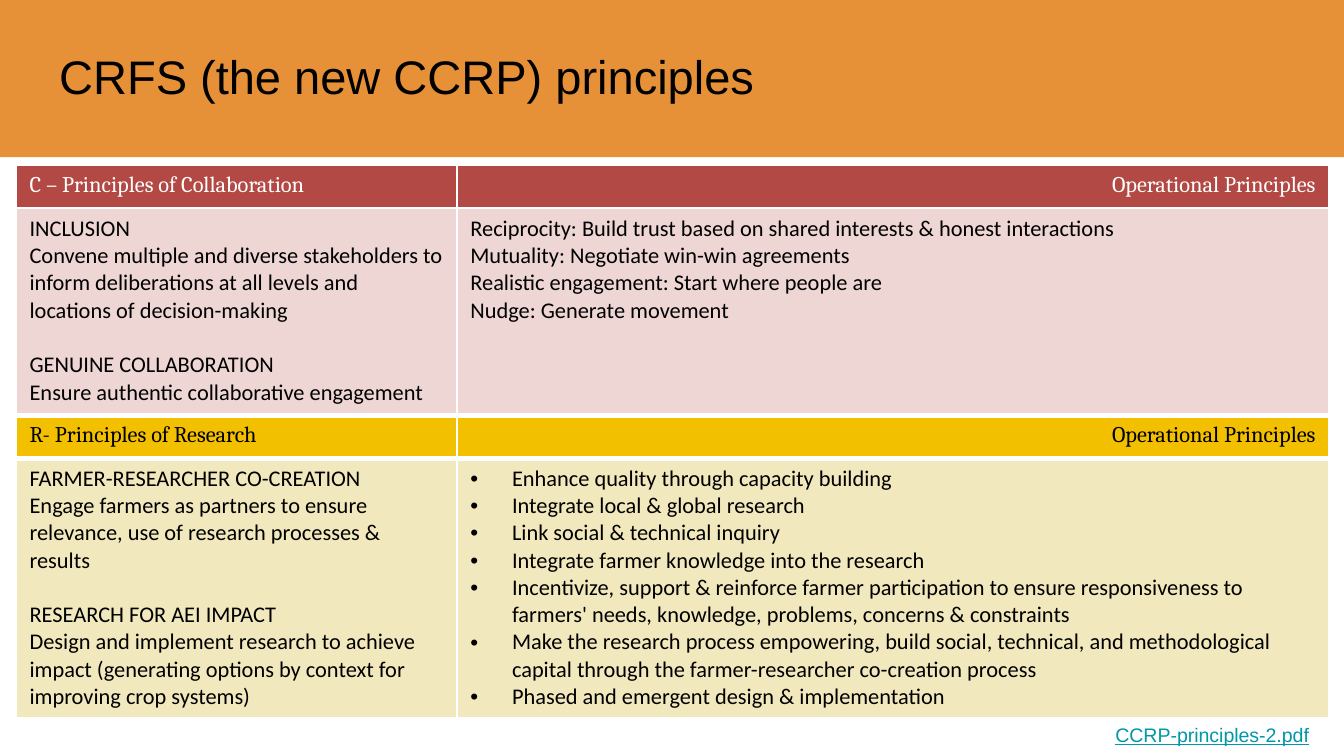
"""Build the slide of collaboration and research principles."""
from copy import deepcopy
from dataclasses import dataclass

from lxml import etree
from pptx import Presentation
from pptx.dml.color import RGBColor
from pptx.enum.shapes import MSO_SHAPE
from pptx.enum.text import MSO_ANCHOR, PP_ALIGN
from pptx.oxml.ns import qn
from pptx.util import Inches, Pt

RECTANGLE = MSO_SHAPE.RECTANGLE
LEFT, RIGHT = PP_ALIGN.LEFT, PP_ALIGN.RIGHT
TOP, MIDDLE = MSO_ANCHOR.TOP, MSO_ANCHOR.MIDDLE
TITLE_ONLY = 5
COLORS = {
    "banner": "E69138", "black": "000000", "white": "FFFFFF", "link": "0097A7",
    "red": "B34944", "pink": "EED6D4", "gold": "F3C000", "cream": "F2E8BD",
}
COLUMN_WIDTHS = (3.28, 6.49)
LINE_GAP = Pt(14.6)


@dataclass(frozen=True)
class TextStyle:
    font: str
    size: float
    color: str = "black"
    underline: bool = False


@dataclass(frozen=True)
class Row:
    height: float
    fill: str
    style: TextStyle
    borders: tuple[int, int]
    principles: list[str]
    operations: list[str]
    operations_align: PP_ALIGN = LEFT
    bulleted: bool = False
    gap_index: int = 0


BODY = TextStyle("Calibri", 12)
OPERATIONAL = ["Operational Principles"]
ROWS = [
    Row(0.32, "red", TextStyle("Cambria", 12, "white"), (1, 1),
        ["C – Principles of Collaboration"], OPERATIONAL, RIGHT),
    Row(1.54, "pink", BODY, (1, 3), [
        "INCLUSION\nConvene multiple and diverse stakeholders to inform deliberations "
        "at all levels and locations of decision-making",
        "GENUINE COLLABORATION\nEnsure authentic collaborative engagement",
    ], [
        "Reciprocity: Build trust based on shared interests & honest interactions",
        "Mutuality: Negotiate win-win agreements",
        "Realistic engagement: Start where people are",
        "Nudge: Generate movement",
    ], gap_index=1),
    Row(0.32, "gold", TextStyle("Cambria", 12), (3, 3),
        ["R- Principles of Research"], OPERATIONAL, RIGHT),
    Row(1.93, "cream", BODY, (3, 1), [
        "FARMER-RESEARCHER CO-CREATION",
        "Engage farmers as partners to ensure relevance, use of research processes & results",
        "RESEARCH FOR AEI IMPACT",
        "Design and implement research to achieve impact (generating options by context "
        "for improving crop systems)",
    ], [
        "Enhance quality through capacity building",
        "Integrate local & global research",
        "Link social & technical inquiry",
        "Integrate farmer knowledge into the research",
        "Incentivize, support & reinforce farmer participation to ensure responsiveness "
        "to farmers' needs, knowledge, problems, concerns & constraints",
        "Make the research process empowering, build social, technical, and methodological "
        "capital through the farmer-researcher co-creation process",
        "Phased and emergent design & implementation",
    ], bulleted=True, gap_index=2),
]


def rgb(name: str) -> RGBColor:
    return RGBColor.from_string(COLORS[name])


def set_attributes(target, values: dict) -> None:
    for name, value in values.items():
        setattr(target, name, value)


def add_bullet(paragraph) -> None:
    properties = paragraph._p.get_or_add_pPr()
    properties.set("marL", str(Inches(0.31)))
    properties.set("indent", str(-Inches(0.31)))
    bullet_color = etree.SubElement(properties, qn("a:buClr"))
    etree.SubElement(bullet_color, qn("a:srgbClr"), val=COLORS["black"])
    etree.SubElement(properties, qn("a:buFont"), typeface="Arial")
    etree.SubElement(properties, qn("a:buChar"), char="•")


def write_text(frame, texts: list[str], style: TextStyle, align: PP_ALIGN = LEFT,
               bulleted: bool = False, gap_index: int = 0) -> None:
    frame.word_wrap = True
    for index, text in enumerate(texts):
        paragraph = frame.paragraphs[0] if index == 0 else frame.add_paragraph()
        if bulleted:
            add_bullet(paragraph)
        set_attributes(paragraph, {
            "alignment": align, "line_spacing": 1.0, "space_after": Pt(0),
            "space_before": LINE_GAP if index and index == gap_index else Pt(0),
        })
        paragraph.text = text
        for run in paragraph.runs:
            set_attributes(run.font, {
                "name": style.font, "size": Pt(style.size), "underline": style.underline,
            })
            run.font.color.rgb = rgb(style.color)
        for line_break in paragraph._p.findall(qn("a:br")):
            line_break.append(deepcopy(paragraph.runs[0]._r.find(qn("a:rPr"))))


def set_margins(target, horizontal: float, vertical: float) -> None:
    set_attributes(target, {
        "margin_left": Inches(horizontal), "margin_right": Inches(horizontal),
        "margin_top": Inches(vertical), "margin_bottom": Inches(vertical),
    })


def add_borders(cell, top: int, bottom: int) -> None:
    properties = cell._tc.get_or_add_tcPr()
    for side, width in {"L": 1, "R": 1, "T": top, "B": bottom}.items():
        line = etree.SubElement(properties, qn(f"a:ln{side}"), w=str(Pt(width)))
        fill = etree.SubElement(line, qn("a:solidFill"))
        etree.SubElement(fill, qn("a:srgbClr"), val=COLORS["white"])


def add_principles_table(slide) -> None:
    frame = slide.shapes.add_table(
        len(ROWS), len(COLUMN_WIDTHS), Inches(0.12), Inches(1.23),
        Inches(sum(COLUMN_WIDTHS)), Inches(sum(row.height for row in ROWS)))
    table = frame.table
    for column, width in zip(table.columns, COLUMN_WIDTHS):
        column.width = Inches(width)
    for table_row, row in zip(table.rows, ROWS):
        table_row.height = Inches(row.height)
        principles, operations = table_row.cells
        for cell in (principles, operations):
            add_borders(cell, *row.borders)
            set_margins(cell, 0.1, 0.05)
            cell.vertical_anchor = TOP
            cell.fill.solid()
            cell.fill.fore_color.rgb = rgb(row.fill)
        write_text(principles.text_frame, row.principles, row.style,
                   gap_index=row.gap_index)
        write_text(operations.text_frame, row.operations, row.style,
                   row.operations_align, row.bulleted)


def add_header(slide) -> None:
    banner = slide.shapes.add_shape(
        RECTANGLE, Inches(-0.01), Inches(-0.01), Inches(10.02), Inches(1.18))
    banner.shadow.inherit = False
    banner.fill.solid()
    banner.fill.fore_color.rgb = rgb("banner")
    banner.line.fill.background()
    title = slide.shapes.title
    title._element.addprevious(banner._element)
    set_attributes(title, {
        "left": Inches(0.34), "top": Inches(0.25),
        "width": Inches(9.32), "height": Inches(0.63),
    })
    set_margins(title.text_frame, 0.1, 0.1)
    title.text_frame.vertical_anchor = MIDDLE
    write_text(title.text_frame, ["CRFS (the new CCRP) principles"],
               TextStyle("Arial", 25.2))


def add_file_name(slide) -> None:
    box = slide.shapes.add_textbox(Inches(7.87), Inches(5.29), Inches(1.97), Inches(0.39))
    set_margins(box.text_frame, 0.1, 0.1)
    write_text(box.text_frame, ["CCRP-principles-2.pdf"],
               TextStyle("Arial", 10.5, "link", True), RIGHT)


def main() -> None:
    presentation = Presentation()
    presentation.slide_width = Inches(10)
    presentation.slide_height = Inches(10 * 9 / 16)
    slide = presentation.slides.add_slide(presentation.slide_layouts[TITLE_ONLY])
    add_header(slide)
    add_file_name(slide)
    add_principles_table(slide)
    presentation.save("out.pptx")


if __name__ == "__main__":
    main()
